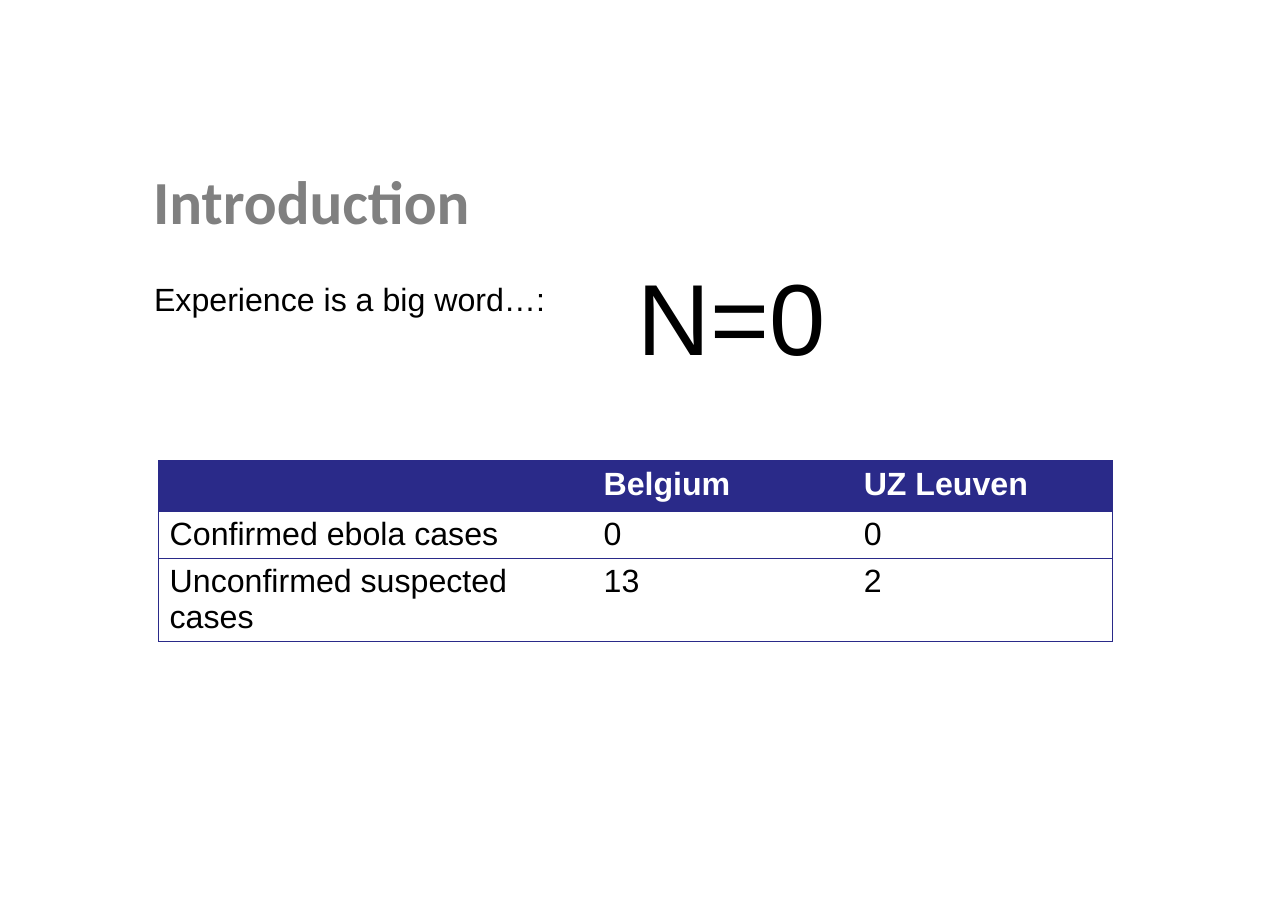
from dataclasses import dataclass

from lxml import etree
from pptx import Presentation
from pptx.dml.color import RGBColor
from pptx.enum.text import MSO_ANCHOR
from pptx.oxml.ns import qn
from pptx.util import Pt

MIDDLE, BOTTOM = MSO_ANCHOR.MIDDLE, MSO_ANCHOR.BOTTOM
TITLE_ONLY = 5


@dataclass(frozen=True)
class Theme:
    title_font: str = "Calibri"
    body_font: str = "Arial"
    grey: str = "808080"
    black: str = "000000"
    white: str = "FFFFFF"
    navy: str = "2A2A89"
    title_size: float = 40
    body_size: float = 21
    big_size: float = 66
    border: float = 0.75


@dataclass(frozen=True)
class Label:
    text: str
    left: float
    top: float
    width: float
    height: float
    size: float


THEME = Theme()
LABELS = [
    Label("Experience is a big word…:", 93.6, 178.6, 504.7, 32.4, THEME.body_size),
    Label("N=0", 409.7, 162, 181.4, 87.1, THEME.big_size),
]
ROWS = [
    ("", "Belgium", "UZ Leuven"),
    ("Confirmed ebola cases", "0", "0"),
    ("Unconfirmed suspected cases", "13", "2"),
]
COL_WIDTHS = (283.6, 170, 170)
ROW_HEIGHTS = (33.2, 30.7, 54.3)


def style(p, font: str, size: float, color: str, bold: bool = False) -> None:
    p.font.name, p.font.size, p.font.bold = font, Pt(size), bold
    p.font.color.rgb = RGBColor.from_string(color)


def add_title(slide, text: str) -> None:
    sp = slide.shapes.title
    sp.left, sp.top, sp.width, sp.height = Pt(92.2), Pt(99.4), Pt(707.8), Pt(62.6)
    tf = sp.text_frame
    tf.text = text
    tf.vertical_anchor = MIDDLE
    tf.margin_left = tf.margin_right = Pt(7.9)
    tf.margin_top = tf.margin_bottom = Pt(4.3)
    p = tf.paragraphs[0]
    p.alignment = 1  # left
    style(p, THEME.title_font, THEME.title_size, THEME.grey, True)


def add_label(slide, label: Label) -> None:
    box = (label.left, label.top, label.width, label.height)
    tf = slide.shapes.add_textbox(*map(Pt, box)).text_frame
    tf.word_wrap = True
    tf.vertical_anchor = BOTTOM
    tf.text = label.text
    style(tf.paragraphs[0], THEME.body_font, label.size, THEME.black)


def set_borders(cell, sides: str) -> None:
    """Draw the named sides (from L, R, T, B) and clear the others."""
    tc_pr = cell._tc.get_or_add_tcPr()
    for side in "LRTB":
        ln = etree.SubElement(tc_pr, qn(f"a:ln{side}"), w=str(Pt(THEME.border)))
        if side in sides:
            fill = etree.SubElement(ln, qn("a:solidFill"))
            etree.SubElement(fill, qn("a:srgbClr"), val=THEME.navy)
        else:
            etree.SubElement(ln, qn("a:noFill"))


def add_cases_table(slide) -> None:
    size = (sum(COL_WIDTHS), sum(ROW_HEIGHTS))
    table = slide.shapes.add_table(
        len(ROWS), len(COL_WIDTHS), Pt(103.7), Pt(301), *map(Pt, size)).table
    table.horz_banding = False
    for col, width in zip(table.columns, COL_WIDTHS):
        col.width = Pt(width)
    for i, (row, height) in enumerate(zip(table.rows, ROW_HEIGHTS)):
        row.height = Pt(height)
        header = i == 0
        for j, (cell, text) in enumerate(zip(row.cells, ROWS[i])):
            # Outer frame and row rules, no inner verticals
            edge = {0: "L", len(COL_WIDTHS) - 1: "R"}.get(j, "")
            set_borders(cell, "TB" + edge)
            if header:
                cell.fill.solid()
                cell.fill.fore_color.rgb = RGBColor.from_string(THEME.navy)
            else:
                cell.fill.background()
            cell.text = text
            style(cell.text_frame.paragraphs[0], THEME.body_font, THEME.body_size,
                  THEME.white if header else THEME.black, header)


def main() -> None:
    prs = Presentation()
    prs.slide_width, prs.slide_height = Pt(841.7), Pt(595.4)
    slide = prs.slides.add_slide(prs.slide_layouts[TITLE_ONLY])

    # Heading
    add_title(slide, "Introduction")
    # Case counts
    add_cases_table(slide)
    # Statement and number
    for label in LABELS:
        add_label(slide, label)

    prs.save("out.pptx")


if __name__ == "__main__":
    main()
